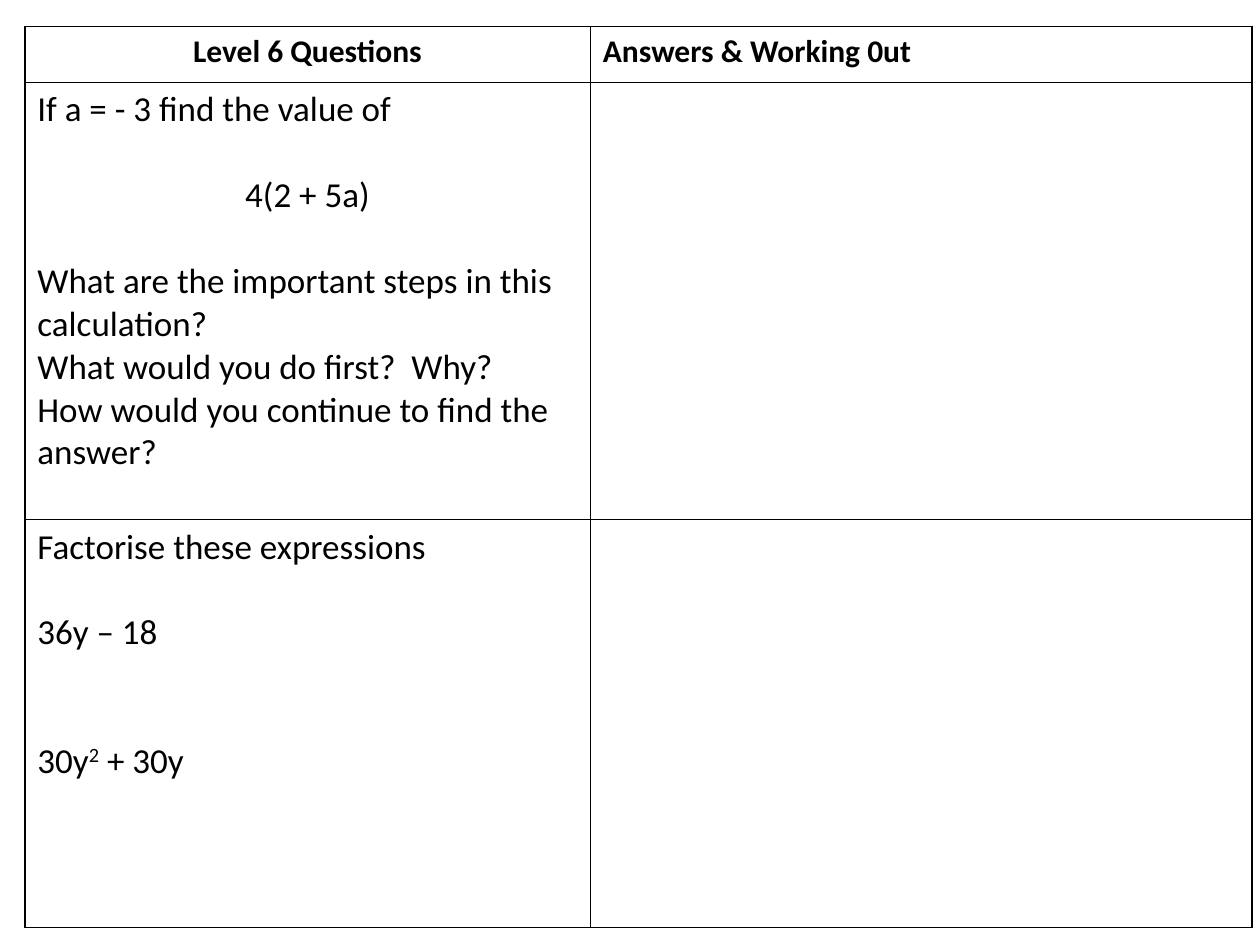
from lxml import etree
from pptx import Presentation
from pptx.dml.color import RGBColor
from pptx.enum.text import PP_ALIGN
from pptx.oxml.ns import qn
from pptx.util import Cm, Pt

LEFT, CENTER = PP_ALIGN.LEFT, PP_ALIGN.CENTER
COLORS = {"ink": "000000"}
FONT = "Calibri"
LINE = 24.5
COLUMN_WIDTHS = [11.4, 13.34]
ROW_HEIGHTS = [1.13, 8.81, 8.23]


def add_border(cell, side):
    line = etree.SubElement(cell._tc.get_or_add_tcPr(), qn(f"a:{side}"), w=str(Pt(1)))
    fill = etree.SubElement(line, qn("a:solidFill"))
    etree.SubElement(fill, qn("a:srgbClr"), val=COLORS["ink"])


def write_cell(cell, lines, size, bold):
    for index, (text, alignment, lines_before) in enumerate(lines):
        frame = cell.text_frame
        paragraph = frame.add_paragraph() if index else frame.paragraphs[0]
        paragraph.alignment = alignment
        paragraph.space_before = Pt(lines_before * LINE)
        paragraph.font.name = FONT
        paragraph.font.size = Pt(size)
        paragraph.font.bold = bold
        paragraph.font.color.rgb = RGBColor.from_string(COLORS["ink"])
        for part_index, part in enumerate(text.split("^")):
            run = paragraph.add_run()
            run.text = part
            if part_index == 1:
                run._r.get_or_add_rPr().set("baseline", "30000")


presentation = Presentation()
presentation.slide_width = Cm(25.4)
presentation.slide_height = Cm(19.05)
slide = presentation.slides.add_slide(presentation.slide_layouts[6])

table = slide.shapes.add_table(
    len(ROW_HEIGHTS), len(COLUMN_WIDTHS), Cm(0.5), Cm(0.53),
    Cm(sum(COLUMN_WIDTHS)), Cm(sum(ROW_HEIGHTS)),
).table
table.first_row = False
table.horz_banding = False
for column, width in zip(table.columns, COLUMN_WIDTHS):
    column.width = Cm(width)
for row, height in zip(table.rows, ROW_HEIGHTS):
    row.height = Cm(height)

for cell in table.iter_cells():
    for side in ("lnL", "lnR", "lnT", "lnB"):
        add_border(cell, side)
    cell.fill.background()

headings = [("Level 6 Questions", CENTER), ("Answers & Working 0ut", LEFT)]
for column_index, (heading, alignment) in enumerate(headings):
    write_cell(table.cell(0, column_index), [(heading, alignment, 0)], 18, True)

questions = [
    [
        ("If a = - 3 find the value of", LEFT, 0),
        ("4(2 + 5a)", CENTER, 1),
        ("What are the important steps in this calculation?", LEFT, 1),
        ("What would you do first?  Why?", LEFT, 0),
        ("How would you continue to find the answer?", LEFT, 0),
    ],
    [
        ("Factorise these expressions", LEFT, 0),
        ("36y – 18", LEFT, 1),
        ("30y^2^ + 30y", LEFT, 2),
    ],
]
for row_index, lines in enumerate(questions, start=1):
    write_cell(table.cell(row_index, 0), lines, 20, False)

presentation.save("out.pptx")
